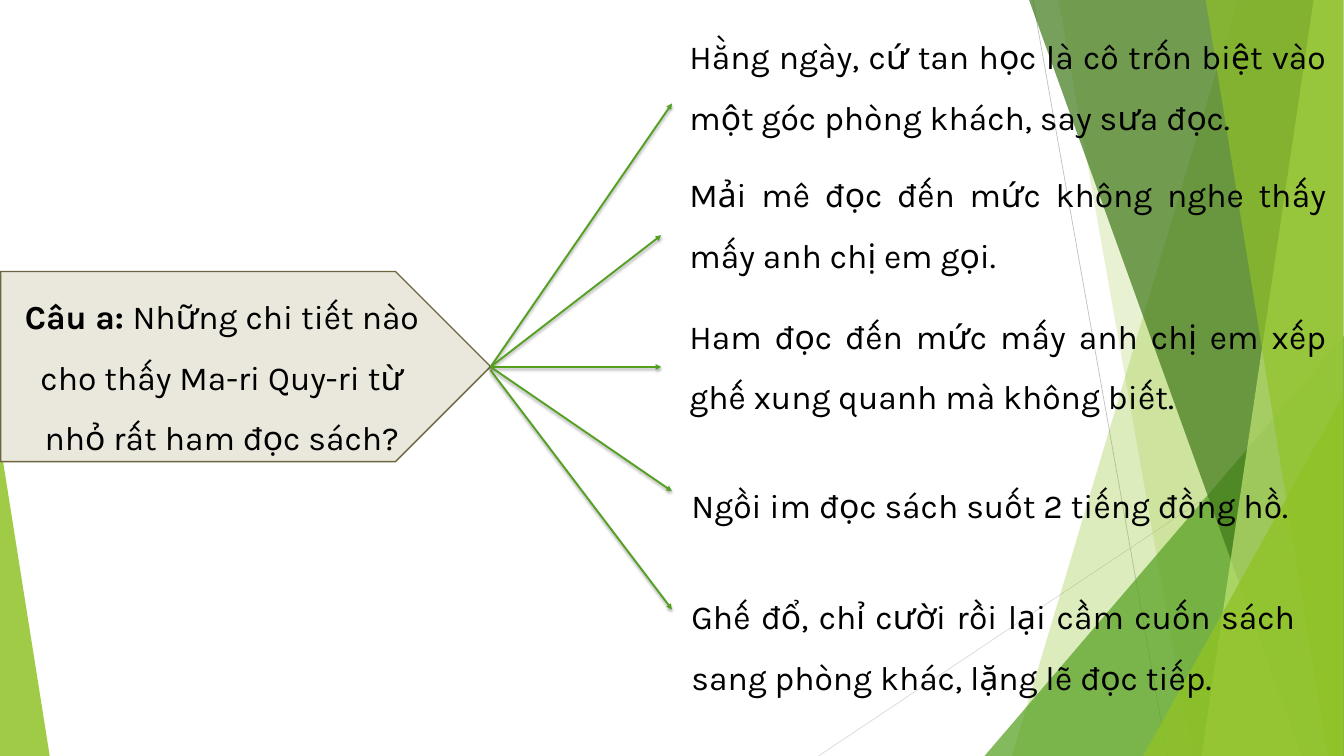
"""Build the slide that links a reading question to its five answers."""
from typing import NamedTuple

from lxml.etree import SubElement as Sub
from pptx import Presentation
from pptx.dml.color import RGBColor as Rgb
from pptx.enum.shapes import MSO_CONNECTOR as Con, MSO_SHAPE as Geo
from pptx.enum.text import MSO_ANCHOR as Anchor, MSO_AUTO_SIZE as Auto, PP_ALIGN as Align
from pptx.oxml.ns import qn
from pptx.util import Inches, Pt

WIDE, HIGH = 20, 11.25
LIME = Rgb(0x90, 0xC2, 0x26)
LEAF = Rgb(0x54, 0xA0, 0x21)
MOSS = Rgb(0x3F, 0x78, 0x19)
PALE = Rgb(0xC0, 0xE4, 0x74)
SAND = Rgb(0xEA, 0xE8, 0xDC)
BARK = Rgb(0x6D, 0x65, 0x40)
GREY = Rgb(0xBF, 0xBF, 0xBF)
MIST = Rgb(0xD9, 0xD9, 0xD9)
BLACK = Rgb(0, 0, 0)
FONT = {"name": "Karla", "size": Pt(36)}


class Band(NamedTuple):
    top: float
    foot: float
    color: Rgb
    alpha: int


class Wedge(NamedTuple):
    left: float
    top: float
    width: float
    apex: int
    color: Rgb
    alpha: int


class Answer(NamedTuple):
    left: float
    top: float
    width: float
    height: float
    text: str


class Arrow(NamedTuple):
    start: float
    right: float
    end: float


DECOR = [
    Band(18.42, 15.06, LIME, 30),
    Band(15.75, 17.74, LIME, 20),
    Wedge(14.65, 5, 5.35, 1, LEAF, 72),
    Band(15.31, 19.37, MOSS, 70),
    Band(19.55, 17.88, PALE, 70),
    Band(17.94, 19.76, LIME, 65),
    Wedge(17.01, 5.89, 2.98, 1, LIME, 80),
    Wedge(0, 6.58, 0.74, 0, LIME, 85),
]
ARROWS = [
    Arrow(5.46, 10, 1.54),
    Arrow(5.46, 9.84, 3.5),
    Arrow(5.46, 9.84, 5.46),
    Arrow(5.46, 10, 7.31),
    Arrow(5.51, 10, 9.07),
]
ANSWERS = [
    Answer(10.16, 0.19, 9.67, 1.81,
           "Hằng ngày, cứ tan học là cô trốn biệt vào một góc phòng khách, say sưa đọc."),
    Answer(10.16, 2.24, 9.67, 1.81,
           "Mải mê đọc đến mức không nghe thấy mấy anh chị em gọi."),
    Answer(10.16, 4.35, 9.67, 1.81,
           "Ham đọc đến mức mấy anh chị em xếp ghế xung quanh mà không biết."),
    Answer(10.19, 6.86, 9.18, 0.9, "Ngồi im đọc sách suốt 2 tiếng đồng hồ."),
    Answer(10.19, 8.52, 9.18, 1.81,
           "Ghế đổ, chỉ cười rồi lại cầm cuốn sách sang phòng khác, lặng lẽ đọc tiếp."),
]
QUERY = [
    ("Câu a: ", True),
    ("Những chi tiết nào cho thấy Ma-ri Quy-ri từ nhỏ rất ham đọc sách?", False),
]


def apply(item, form: dict) -> None:
    for key, value in form.items():
        setattr(item, key, value)


def paint(shape, color: Rgb, alpha: int = 100) -> None:
    shape.shadow.inherit = False
    shape.fill.solid()
    shape.fill.fore_color.rgb = color
    if alpha < 100:
        tone = shape.fill._xPr.find(qn("a:solidFill"))[0]
        Sub(tone, qn("a:alpha"), val=str(alpha * 1000))


def draw_band(slide, band: Band) -> None:
    pen = slide.shapes.build_freeform(Inches(band.top), Inches(-0.01))
    spots = [(19.99, -0.01), (19.99, HIGH), (band.foot, HIGH)]
    pen.add_line_segments([(Inches(x), Inches(y)) for x, y in spots])
    shape = pen.convert_to_shape()
    paint(shape, band.color, band.alpha)
    shape.line.fill.background()


def draw_wedge(slide, wedge: Wedge) -> None:
    box = wedge.left, wedge.top, wedge.width, HIGH - wedge.top
    shape = slide.shapes.add_shape(Geo.ISOSCELES_TRIANGLE, *map(Inches, box))
    shape.adjustments[0] = wedge.apex
    paint(shape, wedge.color, wedge.alpha)
    shape.line.fill.background()


def draw_line(slide, ends: tuple, color: Rgb, width: float):
    line = slide.shapes.add_connector(Con.STRAIGHT, *map(Inches, ends))
    line.line.color.rgb = color
    line.line.width = Pt(width)
    return line, Sub(line._element.spPr, qn("a:effectLst"))


def draw_arrow(slide, arrow: Arrow) -> None:
    ends = 7.3, arrow.start, arrow.right, arrow.end
    line, effect = draw_line(slide, ends, LEAF, 2)
    Sub(line.line._get_or_add_ln(), qn("a:tailEnd"), type="triangle")
    shade = Sub(effect, qn("a:outerShdw"), blurRad=str(Pt(3)), dist=str(Pt(2)),
                dir="5400000", rotWithShape="0")
    tone = Sub(shade, qn("a:srgbClr"), val=str(BLACK))
    Sub(tone, qn("a:alpha"), val="35000")


def write(frame, runs: list, align: Align) -> None:
    para = frame.paragraphs[0]
    apply(para, {"alignment": align, "line_spacing": 1.5})
    for text, bold in runs:
        run = para.add_run()
        run.text = text
        apply(run.font, FONT | {"bold": bold})
        run.font.color.rgb = BLACK


def draw_query(slide) -> None:
    box = map(Inches, (0.01, 4.04, 7.29, 2.83))
    plate = slide.shapes.add_shape(Geo.PENTAGON, *box)
    paint(plate, SAND)
    plate.line.color.rgb = BARK
    plate.line.width = Pt(1.5)
    apply(plate.text_frame, {"word_wrap": True, "vertical_anchor": Anchor.MIDDLE})
    write(plate.text_frame, QUERY, Align.CENTER)


def draw_answer(slide, answer: Answer) -> None:
    box = slide.shapes.add_textbox(*map(Inches, answer[:4]))
    apply(box.text_frame, {"word_wrap": True, "auto_size": Auto.SHAPE_TO_FIT_TEXT})
    write(box.text_frame, [(answer.text, False)], Align.JUSTIFY)


def main() -> None:
    deck = Presentation()
    apply(deck, {"slide_width": Inches(WIDE), "slide_height": Inches(HIGH)})
    slide = deck.slides.add_slide(deck.slide_layouts[6])
    draw_line(slide, (15.37, 0, 17.37, HIGH), GREY, 0.75)
    draw_line(slide, (19.99, 6.04, 12.18, HIGH), MIST, 0.75)
    for part in DECOR:
        draw = draw_band if isinstance(part, Band) else draw_wedge
        draw(slide, part)
    draw_query(slide)
    for arrow in ARROWS:
        draw_arrow(slide, arrow)
    for answer in ANSWERS:
        draw_answer(slide, answer)
    deck.save("out.pptx")


if __name__ == "__main__":
    main()
